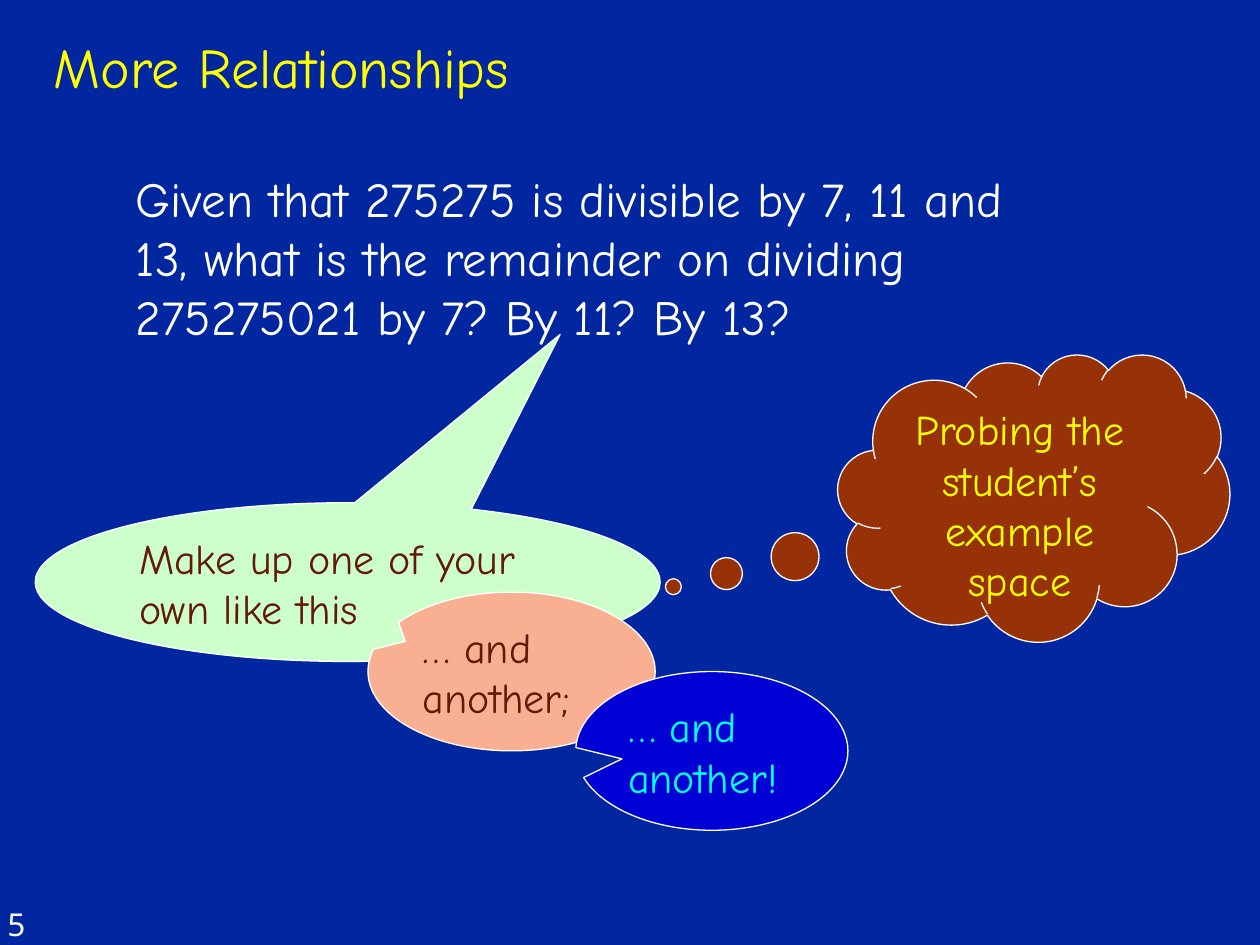
from dataclasses import dataclass

from pptx import Presentation
from pptx.dml import color
from pptx.enum import shapes, text
from pptx.util import Inches, Pt

COLS, ROWS = 100, 75
WIDE, HIGH = Inches(10), Inches(7.5)
KIND = shapes.MSO_SHAPE
LEFT, MID = text.PP_ALIGN.LEFT, text.PP_ALIGN.CENTER
TOP, BASE = text.MSO_ANCHOR.TOP, text.MSO_ANCHOR.BOTTOM
WHITE, YELLOW, BROWN = "FFFFFF", "FFFF00", "631908"


@dataclass
class Label:
    words: str
    grid: tuple[float, float, float, float]
    size: int
    ink: str = WHITE
    face: str = "Comic Neue"
    align: int = LEFT
    anchor: int = TOP


@dataclass
class Bubble:
    label: Label
    fill: str
    tail: tuple[float, float]
    kind: int = KIND.OVAL_CALLOUT


LABELS = [
    Label("5", (-0.4, 71.3, 7.5, 4), 18, face="Noto Sans"),
    Label("More Relationships", (3.3, 1.7, 85, 6.7), 32, YELLOW, anchor=BASE),
    Label("Given that 275275 is divisible by 7, 11 and 13, what is the remainder "
          "on dividing 275275021 by 7? By 11? By 13?", (9.8, 12.9, 72.4, 15.1), 28),
]
BUBBLES = [
    Bubble(Label("Make up one of your own like this", (2.8, 39.9, 49.6, 12.6), 24, BROWN),
           "CCFFCC", (0.34, -1.56)),
    Bubble(Label("… and another;", (29.2, 47, 22.8, 12.6), 24, BROWN),
           "F9B092", (-0.37, -0.19)),
    Bubble(Label("… and another!", (45.7, 53.3, 21.6, 12.6), 24, "00FFFF"),
           "0000D4", (-0.33, 0.05)),
    Bubble(Label("Probing the student’s example space", (66.5, 28.1, 31.1, 22.8), 24,
                 YELLOW, align=MID),
           "973208", (-0.92, 0.31), KIND.CLOUD_CALLOUT),
]


def paint(fill, tone: str) -> None:
    fill.solid()
    fill.fore_color.rgb = color.RGBColor.from_string(tone)


def place(grid: tuple) -> list[int]:
    x, y, w, h = grid
    return [int(WIDE * x / COLS), int(HIGH * y / ROWS),
            int(WIDE * w / COLS), int(HIGH * h / ROWS)]


def write(shape, label: Label) -> None:
    frame = shape.text_frame
    style = {
        "word_wrap": True, "vertical_anchor": label.anchor,
        "margin_left": Inches(0.1), "margin_right": Inches(0.1),
        "margin_top": Inches(0.05), "margin_bottom": Inches(0.05),
    }
    for name, value in style.items():
        setattr(frame, name, value)
    para = frame.paragraphs[0]
    para.alignment = label.align
    run = para.add_run()
    run.text = label.words
    for name, value in {"name": label.face, "size": Pt(label.size)}.items():
        setattr(run.font, name, value)
    paint(run.font.fill, label.ink)


def speak(slide, bubble: Bubble) -> None:
    shape = slide.shapes.add_shape(bubble.kind, *place(bubble.label.grid))
    shape.shadow.inherit = False
    for index, value in enumerate(bubble.tail):
        shape.adjustments[index] = value
    paint(shape.fill, bubble.fill)
    paint(shape.line.fill, WHITE)
    shape.line.width = Pt(0.75)
    write(shape, bubble.label)


def main() -> None:
    deck = Presentation()
    deck.slide_width, deck.slide_height = WIDE, HIGH
    slide = deck.slides.add_slide(deck.slide_layouts[6])
    paint(slide.background.fill, "00279F")
    for bubble in BUBBLES:
        speak(slide, bubble)
    for label in LABELS:
        write(slide.shapes.add_textbox(*place(label.grid)), label)
    deck.save("out.pptx")


if __name__ == "__main__":
    main()
